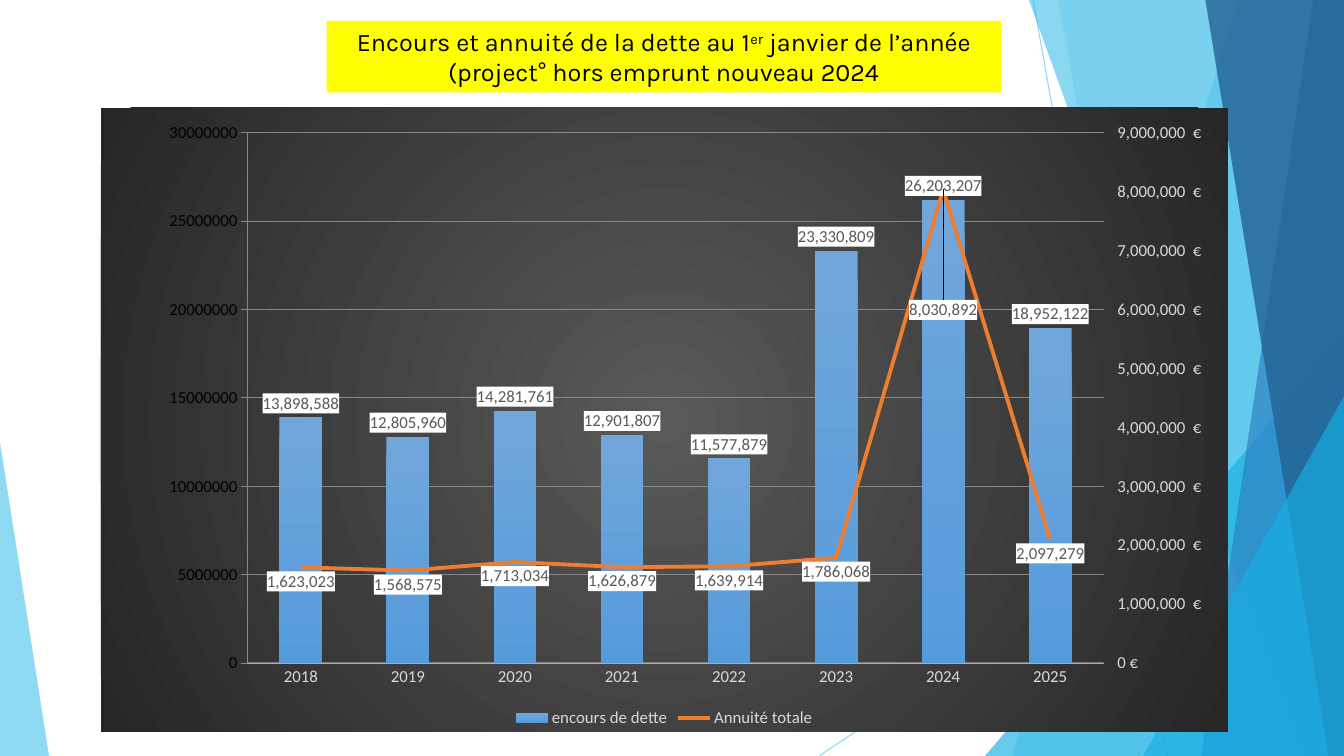
from copy import deepcopy

from pptx import Presentation
from pptx import oxml
from pptx.chart import axis as ax
from pptx.chart import data as cd
from pptx.dml import color as dml
from pptx.enum import chart as ch
from pptx.enum import shapes, text
from pptx.oxml import ns
from pptx.util import Pt

WIDTH, HEIGHT = 960, 540
SKY, CYAN, BLUE, NAVY = "5FCBEF", "17B0E4", "2E83C3", "236292"
YEARS = [str(year) for year in range(2018, 2026)]
DEBT = [13898588, 12805960, 14281761, 12901807, 11577879, 23330809, 26203207, 18952122]
ANNUITY = [1623023, 1568575, 1713034, 1626879, 1639914, 1786068, 8030892, 2097279]
DEBT_FORMAT = '" "#,##0.00"  € ";" - "#,##0.00" € ";" "0.00" € "'
ANNUITY_FORMAT = '" "#,##0"  € ";" - "#,##0" € ";" "0" € "'
FACETS = [
    (SKY, 36, [(884, 0), (WIDTH, 0), (WIDTH, HEIGHT), (723, HEIGHT)]),
    (SKY, 20, [(756, 0), (WIDTH, 0), (WIDTH, HEIGHT), (852, HEIGHT)]),
    (CYAN, 66, [(703.5, HEIGHT), (WIDTH, 240), (WIDTH, HEIGHT)]),
    (CYAN, 50, [(735, 0), (WIDTH, 0), (WIDTH, HEIGHT), (929.5, HEIGHT)]),
    (BLUE, 70, [(938, 0), (WIDTH, 0), (WIDTH, HEIGHT), (858, HEIGHT)]),
    (NAVY, 80, [(861, 0), (WIDTH, 0), (WIDTH, HEIGHT), (949, HEIGHT)]),
    (CYAN, 66, [(816.5, HEIGHT), (WIDTH, 283), (WIDTH, HEIGHT)]),
    (SKY, 70, [(0, HEIGHT), (0, 316), (35, HEIGHT)]),
]


def rgb(value):
    return dml.RGBColor.from_string(value)


def xml(tag, inner="", attrs=""):
    return oxml.parse_xml(f"<{tag} {ns.nsdecls('c', 'a')} {attrs}>{inner}</{tag}>")


def paint(fill, color, opacity=100):
    fill.solid()
    fill.fore_color.rgb = rgb(color)
    if opacity < 100:
        fill._xPr.find(".//" + ns.qn("a:srgbClr")).append(
            xml("a:alpha", attrs=f'val="{opacity * 1000}"'))


def draw_line(line, color, width, opacity=100):
    line.width = Pt(width)
    paint(line.fill, color, opacity)


def gradient(inner, outer, direction):
    stops = "".join(f'<a:gs pos="{pos}"><a:srgbClr val="{color}"/></a:gs>'
                    for pos, color in ((0, inner), (100000, outer)))
    return xml("a:gradFill", f"<a:gsLst>{stops}</a:gsLst>{direction}")


def style_font(font, size=12, color="D9D9D9", face="Calibri"):
    font.size = Pt(size)
    font.name = face
    font.color.rgb = rgb(color)


def add_text(paragraph, words, baseline=0, **style):
    run = paragraph.add_run()
    run.text = words
    style_font(run.font, **style)
    if baseline:
        run._r.get_or_add_rPr().set("baseline", str(baseline * 1000))


def add_facet(slide, color, opacity, corners):
    points = [(Pt(x), Pt(y)) for x, y in corners]
    builder = slide.shapes.build_freeform(*points[0])
    builder.add_line_segments(points[1:], close=True)
    facet = builder.convert_to_shape()
    facet.shadow.inherit = False
    paint(facet.fill, color, opacity)
    facet.line.fill.background()


def add_ray(slide, start, end):
    ray = slide.shapes.add_connector(
        shapes.MSO_CONNECTOR.STRAIGHT, *(Pt(v) for v in start + end))
    draw_line(ray.line, SKY, 0.75, 70)
    ray._element.spPr.append(xml("a:effectLst"))


def add_title(slide):
    title = slide.shapes.title
    title.left, title.top, title.width, title.height = Pt(233.3), Pt(15), Pt(481.7), Pt(51)
    paint(title.fill, "FFFF00")
    frame = title.text_frame
    frame.word_wrap = True
    frame.auto_size = text.MSO_AUTO_SIZE.NONE
    frame.vertical_anchor = text.MSO_ANCHOR.MIDDLE
    heading = frame.paragraphs[0]
    heading.alignment = text.PP_ALIGN.CENTER
    style = dict(size=18, color="000000", face="Karla")
    add_text(heading, "Encours et annuité de la dette au 1", **style)
    add_text(heading, "er", baseline=30, **style)
    add_text(heading, " janvier de l’année (project° hors emprunt nouveau 2024", **style)


def split_annuity(chart):
    bars, years, amounts = (chart._chartSpace.find(".//" + ns.qn(tag))
                            for tag in ("c:barChart", "c:catAx", "c:valAx"))
    annuity = bars.findall(ns.qn("c:ser"))[1]
    for flag in annuity.findall(ns.qn("c:invertIfNegative")):
        annuity.remove(flag)
    line_plot = xml("c:lineChart", '<c:grouping val="standard"/><c:varyColors val="0"/>'
                    '<c:marker val="1"/><c:axId val="501"/><c:axId val="502"/>')
    line_plot.insert(2, annuity)
    bars.addnext(line_plot)
    right_years, right_amounts = deepcopy(years), deepcopy(amounts)
    amounts.addnext(right_amounts)
    right_amounts.addnext(right_years)
    for element, own, other in ((right_years, "501", "502"), (right_amounts, "502", "501")):
        element.find(ns.qn("c:axId")).set("val", own)
        element.find(ns.qn("c:crossAx")).set("val", other)
    right_amounts.find(ns.qn("c:axPos")).set("val", "r")
    right_amounts.find(ns.qn("c:crosses")).set("val", "max")
    ax.CategoryAxis(right_years).visible = False
    return ax.ValueAxis(right_amounts)


def style_amounts(axis, top, step, number_format, tick):
    axis.minimum_scale, axis.maximum_scale, axis.major_unit = 0, top, step
    axis.major_tick_mark = tick
    axis.tick_labels.number_format = number_format
    axis.tick_labels.number_format_is_linked = False
    axis.format.line.fill.background()
    style_font(axis.tick_labels.font)


def label_values(series, position):
    labels = series.data_labels
    labels.show_value = True
    labels.number_format = "#,##0"
    labels.number_format_is_linked = False
    labels.position = position
    style_font(labels.font, color="595959")
    group = labels._element
    group.find(ns.qn("c:numFmt")).addnext(
        xml("c:spPr", '<a:solidFill><a:srgbClr val="FFFFFF"/></a:solidFill>'))
    return group


def lower_label(group, index, offset):
    label = xml("c:dLbl", f'<c:idx val="{index}"/><c:layout><c:manualLayout>'
                f'<c:x val="0"/><c:y val="{offset}"/></c:manualLayout></c:layout>')
    label.extend([deepcopy(part) for part in group
                  if part.tag != ns.qn("c:showLeaderLines")])
    group.insert(0, label)


def style_backdrop(chart):
    space = chart._chartSpace
    glow = '<a:path path="circle"><a:fillToRect l="50000" t="50000" r="50000" b="50000"/></a:path>'
    backdrop = xml("c:spPr", "<a:ln><a:noFill/></a:ln>")
    backdrop.insert(0, gradient("595959", "262626", glow))
    space.find(ns.qn("c:chart")).addnext(backdrop)
    plot_area = space.find(".//" + ns.qn("c:plotArea"))
    for layout in plot_area.findall(ns.qn("c:layout")):
        plot_area.remove(layout)
    box = "".join(f'<c:{side} val="{share}"/>' for side, share in
                  (("x", 0.13), ("y", 0.04), ("w", 0.76), ("h", 0.85)))
    plot_area.insert(0, xml("c:layout", '<c:manualLayout><c:layoutTarget val="inner"/>'
                            '<c:xMode val="edge"/><c:yMode val="edge"/>'
                            f"{box}</c:manualLayout>"))


def add_debt_chart(slide):
    figures = cd.CategoryChartData()
    figures.categories = YEARS
    figures.add_series("encours de dette", DEBT)
    figures.add_series("Annuité totale", ANNUITY)
    chart = slide.shapes.add_chart(ch.XL_CHART_TYPE.COLUMN_CLUSTERED, Pt(72), Pt(77),
                                   Pt(805), Pt(445.7), figures).chart
    chart.has_title = False
    style_font(chart.font, color="000000")
    right_axis = split_annuity(chart)
    style_backdrop(chart)

    chart.value_axis.has_major_gridlines = True
    draw_line(chart.value_axis.major_gridlines.format.line, "F2F2F2", 0.75, 10)
    style_amounts(chart.value_axis, 30000000, 5000000, DEBT_FORMAT, ch.XL_TICK_MARK.NONE)
    right_axis.has_major_gridlines = False
    style_amounts(right_axis, 9000000, 1000000, ANNUITY_FORMAT, ch.XL_TICK_MARK.OUTSIDE)
    year_axis = chart.category_axis
    year_axis.major_tick_mark = ch.XL_TICK_MARK.NONE
    draw_line(year_axis.format.line, "F2F2F2", 1, 54)
    style_font(year_axis.tick_labels.font)

    chart.has_legend = True
    chart.legend.position = ch.XL_LEGEND_POSITION.BOTTOM
    chart.legend.include_in_layout = False
    style_font(chart.legend.font)

    bars, line_plot = chart.plots
    bars.gap_width = 150
    bars.vary_by_categories = False
    debt, annuity = bars.series[0], line_plot.series[0]
    debt.format.fill.background()
    bar_format = debt._element.spPr
    bar_format.replace(bar_format[0], gradient("71A6DB", "559BDB", '<a:lin ang="5400000"/>'))
    label_values(debt, ch.XL_LABEL_POSITION.OUTSIDE_END)
    draw_line(annuity.format.line, "ED7D31", 2.75)
    annuity.marker.style = ch.XL_MARKER_STYLE.NONE
    annuity.smooth = False
    lower_label(label_values(annuity, ch.XL_LABEL_POSITION.BELOW), YEARS.index("2024"), 0.17)


def main():
    deck = Presentation()
    deck.slide_width, deck.slide_height = Pt(WIDTH), Pt(HEIGHT)
    slide = deck.slides.add_slide(deck.slide_layouts[5])
    add_ray(slide, (738, 0), (834, HEIGHT))
    add_ray(slide, (WIDTH, 290), (585, HEIGHT))
    for facet in FACETS:
        add_facet(slide, *facet)
    add_debt_chart(slide)
    add_title(slide)
    deck.save("out.pptx")


if __name__ == "__main__":
    main()
